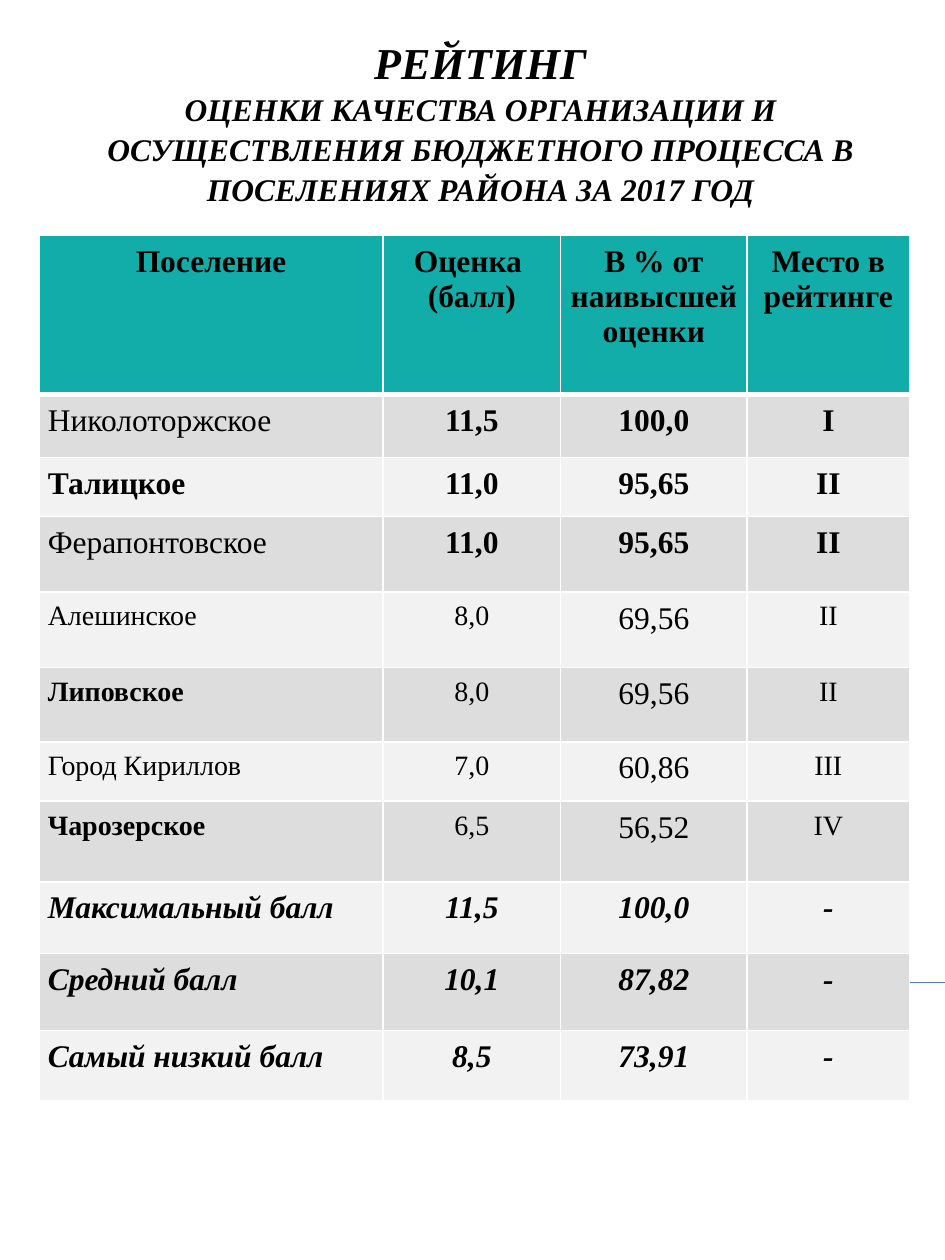
from copy import deepcopy
from dataclasses import dataclass

from lxml import etree
from pptx import Presentation
from pptx.dml.color import RGBColor
from pptx.enum import shapes, text
from pptx.oxml.ns import qn
from pptx.util import Inches, Pt

FONT = "Times New Roman"
COLORS = {
    "text": "000000",
    "header": "13ADA9",
    "odd": "DDDDDD",
    "even": "F2F2F2",
    "border": "FFFFFF",
    "rule": "4F81BD",
}
COLUMN_WIDTHS = [2.73, 1.41, 1.48, 1.29]
HEADER_HEIGHT = 1.26
HEADERS = ["Поселение", "Оценка \n(балл)", "В % от наивысшей оценки", "Место в рейтинге"]
CELL_MARGIN = Inches(0.07)


@dataclass
class RatingRow:
    name: str
    score: str
    percent: str
    place: str
    height: float
    size: int = 16
    name_bold: bool = False
    values_bold: bool = False
    italic: bool = False


ROWS = [
    RatingRow("Николоторжское", "11,5", "100,0", "I", 0.5, 18, False, True),
    RatingRow("Талицкое", "11,0", "95,65", "II", 0.47, 18, True, True),
    RatingRow("Ферапонтовское", "11,0", "95,65", "II", 0.6, 18, False, True),
    RatingRow("Алешинское", "8,0", "69,56", "II", 0.6),
    RatingRow("Липовское", "8,0", "69,56", "II", 0.59, name_bold=True),
    RatingRow("Город Кириллов", "7,0", "60,86", "III", 0.47),
    RatingRow("Чарозерское", "6,5", "56,52", "IV", 0.64, name_bold=True),
    RatingRow("Максимальный балл", "11,5", "100,0", "-", 0.57, 18, True, True, True),
    RatingRow("Средний балл", "10,1", "87,82", "-", 0.61, 18, True, True, True),
    RatingRow("Самый низкий балл", "8,5", "73,91", "-", 0.56, 18, True, True, True),
]


def color(name: str) -> RGBColor:
    return RGBColor.from_string(COLORS[name])


def add_run(paragraph, content: str, *, size: float, bold: bool = False, italic: bool = False):
    run = paragraph.add_run()
    run.text = content
    font = run.font
    font.name = FONT
    font.size = Pt(size)
    font.bold = bold
    font.italic = italic
    font.color.rgb = color("text")
    return run


def set_borders(cell, bottom: float = 1) -> None:
    properties = cell._tc.get_or_add_tcPr()
    widths = {"lnL": 1, "lnR": 1, "lnT": 1, "lnB": bottom}
    for index, (side, width) in enumerate(widths.items()):
        line = etree.Element(qn(f"a:{side}"), w=str(Pt(width)))
        fill = etree.SubElement(line, qn("a:solidFill"))
        etree.SubElement(fill, qn("a:srgbClr"), val=COLORS["border"])
        properties.insert(index, line)


def fill_cell(cell, content: str, fill: str, *, centered: bool = True, bottom: float = 1, **style) -> None:
    cell.margin_left = cell.margin_right = CELL_MARGIN
    cell.margin_top = cell.margin_bottom = CELL_MARGIN
    cell.fill.solid()
    cell.fill.fore_color.rgb = color(fill)
    set_borders(cell, bottom)
    frame = cell.text_frame
    for index, line in enumerate(content.split("\n")):
        paragraph = frame.add_paragraph() if index else frame.paragraphs[0]
        paragraph.alignment = text.PP_ALIGN.CENTER if centered else text.PP_ALIGN.LEFT
        add_run(paragraph, line, **style)


def add_title(slide) -> None:
    title = slide.shapes.title
    title.left, title.top = Inches(0.41), Inches(0.21)
    title.width, title.height = Inches(6.81), Inches(1.56)
    frame = title.text_frame
    frame.word_wrap = True
    frame.auto_size = text.MSO_AUTO_SIZE.NONE
    frame.vertical_anchor = text.MSO_ANCHOR.TOP
    paragraph = frame.paragraphs[0]
    paragraph.alignment = text.PP_ALIGN.CENTER
    paragraph.line_spacing = 1.05
    heading = add_run(paragraph, "РЕЙТИНГ", size=25.2, bold=True, italic=True)
    paragraph.add_line_break()
    # The break takes the heading's size, so the first line keeps its height.
    paragraph._p.find(qn("a:br")).append(deepcopy(heading._r.rPr))
    add_run(
        paragraph,
        "ОЦЕНКИ КАЧЕСТВА ОРГАНИЗАЦИИ И ОСУЩЕСТВЛЕНИЯ БЮДЖЕТНОГО ПРОЦЕССА "
        "В ПОСЕЛЕНИЯХ РАЙОНА ЗА 2017 ГОД",
        size=18, bold=True, italic=True,
    )


def add_rule(slide) -> None:
    rule = slide.shapes.add_connector(
        shapes.MSO_CONNECTOR.STRAIGHT, Inches(0.42), Inches(7.8), Inches(7.5), Inches(7.8)
    )
    rule.line.color.rgb = color("rule")
    rule.line.width = Pt(0.75)
    etree.SubElement(rule._element.spPr, qn("a:effectLst"))


def add_rating_table(slide) -> None:
    heights = [HEADER_HEIGHT] + [row.height for row in ROWS]
    table = slide.shapes.add_table(
        len(heights), len(COLUMN_WIDTHS), Inches(0.31), Inches(1.87),
        Inches(sum(COLUMN_WIDTHS)), Inches(sum(heights)),
    ).table
    for column, width in zip(table.columns, COLUMN_WIDTHS):
        column.width = Inches(width)
    for table_row, height in zip(table.rows, heights):
        table_row.height = Inches(height)

    for index, header in enumerate(HEADERS):
        fill_cell(table.cell(0, index), header, "header", bottom=3, size=18, bold=True)
    for number, row in enumerate(ROWS, start=1):
        fill = "odd" if number % 2 else "even"
        for index, value in enumerate([row.name, row.score, row.percent, row.place]):
            fill_cell(
                table.cell(number, index), value, fill,
                centered=index > 0,
                size=18 if index == 2 else row.size,
                bold=row.values_bold if index else row.name_bold,
                italic=row.italic,
            )


def main() -> None:
    presentation = Presentation()
    presentation.slide_width = Inches(7.5)
    presentation.slide_height = Inches(10)
    slide = presentation.slides.add_slide(presentation.slide_layouts[5])
    add_rule(slide)
    add_rating_table(slide)
    add_title(slide)
    presentation.save("out.pptx")


if __name__ == "__main__":
    main()
